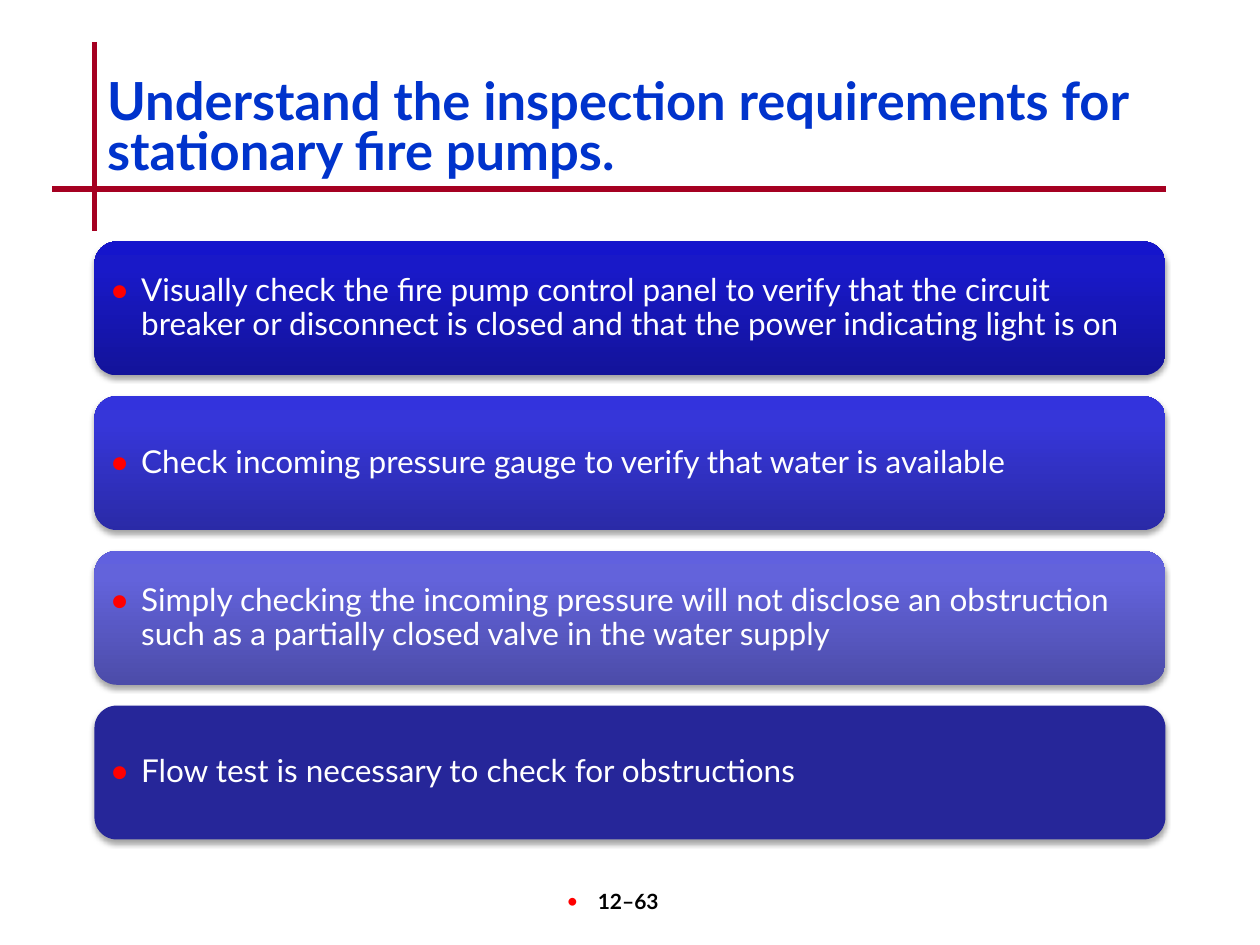
import copy
from lxml import etree
from pptx import Presentation
from pptx import util as u
from pptx.dml.color import RGBColor
from pptx.enum import shapes, text
from pptx.oxml.ns import qn

Pt = u.Pt
C = {"rule": "A50021", "title": "0033CC", "bullet": "FF0000",
     "white": "FFFFFF", "black": "000000", "flat": "262699"}
CARDS = [
    ("Visually check the fire pump control panel to verify that the circuit "
     "breaker or disconnect is closed and that the power indicating light is on",
     ["13139A", "1919C8", "1515CC"]),
    ("Check incoming pressure gauge to verify that water is available",
     ["2A2AA7", "3636D9", "3333DD"]),
    ("Simply checking the incoming pressure will not disclose an obstruction "
     "such as a partially closed valve in the water supply",
     ["4C4CA9", "6363DB", "6161DF"]),
    ("Flow test is necessary to check for obstructions", [C["flat"]]),
]
STOPS = [0, 0.8, 1]


def write(tf, words, size, color, bold, align, spacing, frame):
    for name, value in dict(word_wrap=True, auto_size=text.MSO_AUTO_SIZE.NONE, **frame).items():
        setattr(tf, name, value)
    p = tf.paragraphs[0]
    p.alignment, p.line_spacing = align, spacing
    r = p.add_run()
    r.text = words
    for name, value in dict(name="Lato", size=Pt(size), bold=bold).items():
        setattr(r.font, name, value)
    r.font.color.rgb = RGBColor.from_string(color)
    return p


def add_bullet(p, percent):
    pPr = p._p.get_or_add_pPr()
    pPr.set("marL", str(Pt(18)))
    pPr.set("indent", str(-Pt(18)))
    clr = etree.SubElement(pPr, qn("a:buClr"))
    etree.SubElement(clr, qn("a:srgbClr"), val=C["bullet"])
    etree.SubElement(pPr, qn("a:buSzPct"), val=str(percent * 1000))
    etree.SubElement(pPr, qn("a:buFont"), typeface="Lato")
    etree.SubElement(pPr, qn("a:buChar"), char="•")


prs = Presentation()
prs.slide_width, prs.slide_height = Pt(720), Pt(540)
s = prs.slides.add_slide(prs.slide_layouts[5])

for ends in [(54, 24, 54, 132), (30, 108, 666, 108)]:
    ln = s.shapes.add_connector(shapes.MSO_CONNECTOR.STRAIGHT, *map(Pt, ends))
    ln.line.color.rgb = RGBColor.from_string(C["rule"])
    ln.line.width = Pt(3)
    etree.SubElement(ln._element.spPr, qn("a:effectLst"))

title = s.shapes.title
title.left, title.top, title.width, title.height = map(Pt, (54, 42, 612, 72))
write(title.text_frame, "Understand the inspection requirements for stationary fire pumps.",
      30, C["title"], True, text.PP_ALIGN.LEFT, 0.8,
      dict(vertical_anchor=text.MSO_ANCHOR.TOP))

inset = Pt(5)
card_frame = dict(vertical_anchor=text.MSO_ANCHOR.MIDDLE, margin_left=inset,
                  margin_top=inset, margin_right=inset, margin_bottom=inset)
for i, (words, colors) in enumerate(CARDS):
    sp = s.shapes.add_shape(shapes.MSO_SHAPE.ROUNDED_RECTANGLE,
                            Pt(54), Pt(138 + i * 88.4), Pt(612), Pt(76.5))
    spPr = sp._element.spPr
    if len(colors) == 1:
        sp.fill.solid()
        sp.fill.fore_color.rgb = RGBColor.from_string(colors[0])
    else:
        sp.fill.gradient()
        sp.fill.gradient_angle = 90
        gs = spPr.find(".//" + qn("a:gsLst"))
        gs.append(copy.deepcopy(gs[-1]))
        for stop, position, color in zip(sp.fill.gradient_stops, STOPS, colors):
            stop.position = position
            stop.color.rgb = RGBColor.from_string(color)
    sp.line.fill.background()
    sp.shadow.inherit = False
    shadow = etree.SubElement(spPr.find(qn("a:effectLst")), qn("a:outerShdw"),
                              blurRad=str(Pt(3.1)), dist=str(Pt(1.8)),
                              dir="5400000", rotWithShape="0")
    clr = etree.SubElement(shadow, qn("a:srgbClr"), val=C["black"])
    etree.SubElement(clr, qn("a:alpha"), val="35000")
    p = write(sp.text_frame, words, 18, C["white"], False, text.PP_ALIGN.LEFT, 0.9, card_frame)
    add_bullet(p, 110)

number = s.shapes.add_textbox(Pt(282), Pt(504), Pt(150), Pt(36))
p = write(number.text_frame, "12–63", 12, C["black"], True, text.PP_ALIGN.CENTER, 1.0,
          dict(vertical_anchor=text.MSO_ANCHOR.TOP, margin_right=Pt(21)))
add_bullet(p, 100)

prs.save("out.pptx")
